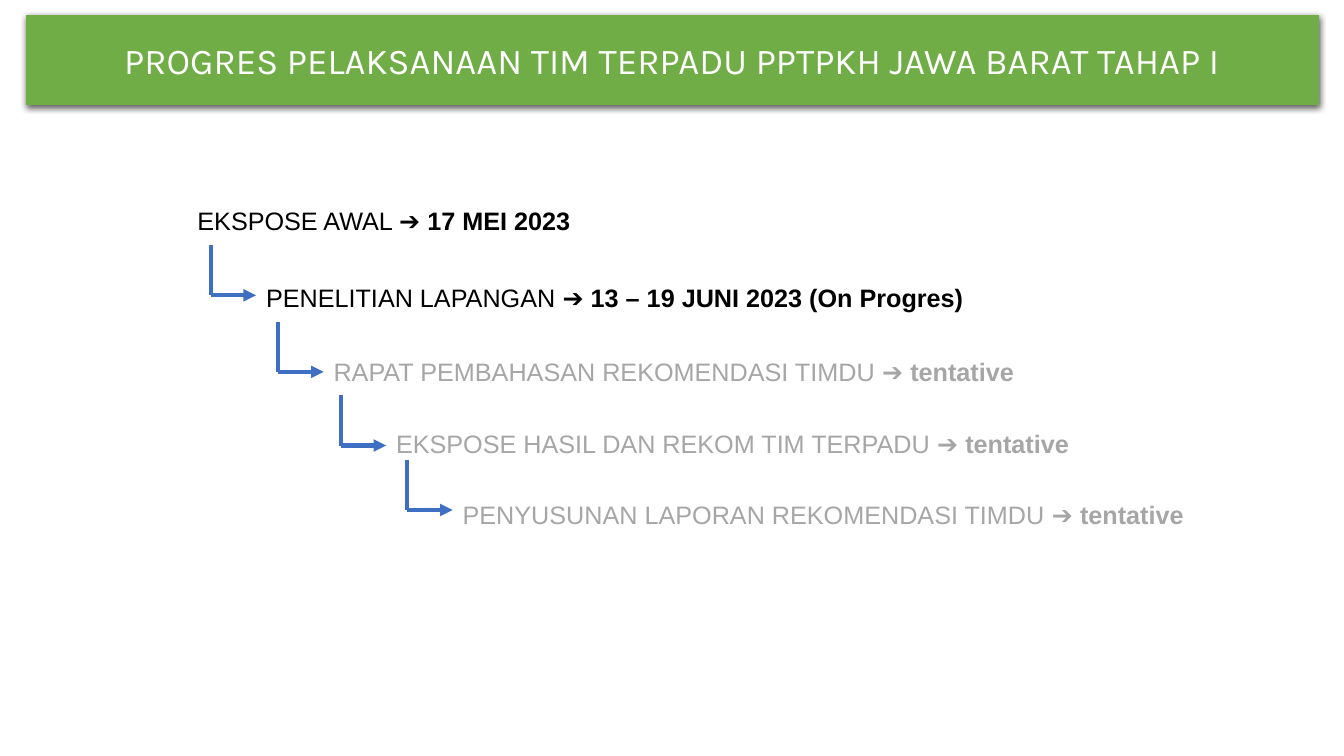
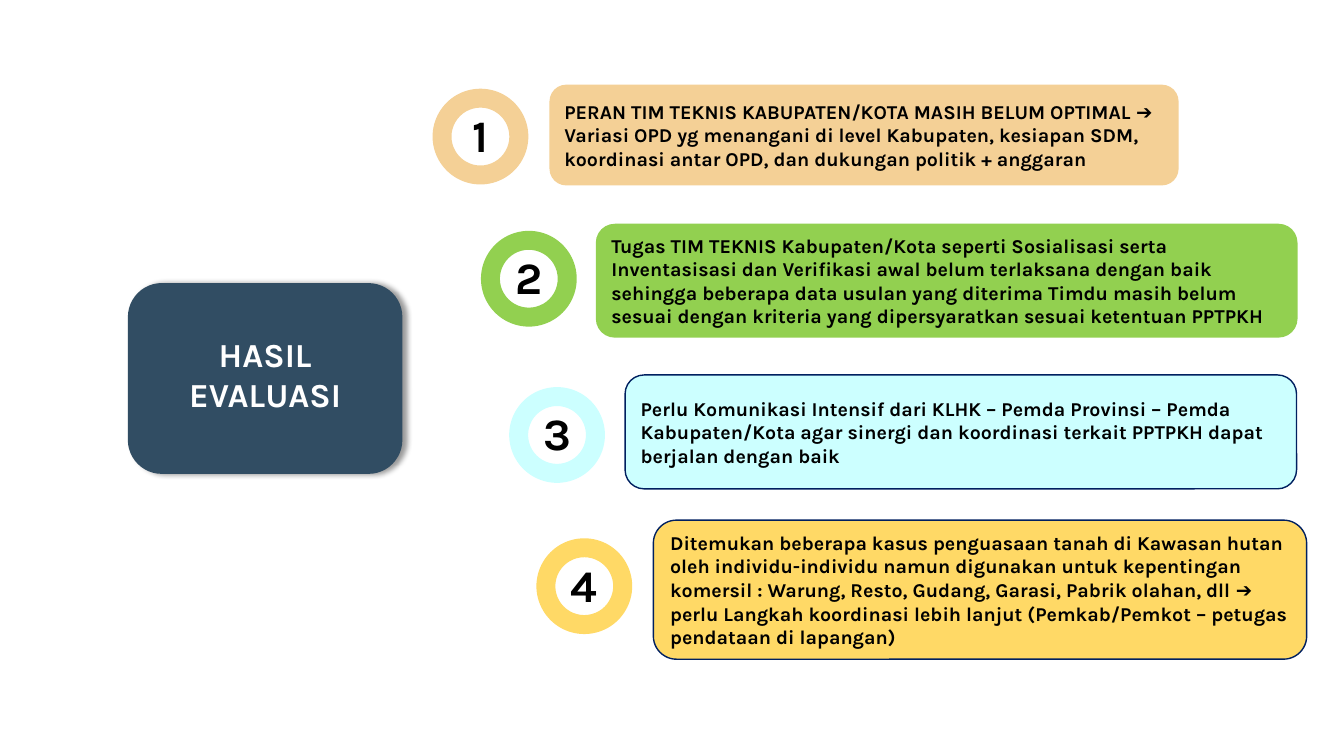
from dataclasses import dataclass
from typing import Optional

from lxml import etree
from pptx import Presentation
from pptx.dml.color import RGBColor
from pptx.enum import shapes as kinds, text as styles
from pptx.oxml import ns
from pptx.util import Inches, Pt

BLACK, WHITE, GREY = "000000", "FFFFFF", "A6A6A6"
GREEN, BLUE, SLATE, NAVY = "70AD47", "3F6FC3", "314D63", "002060"
TITLE_FONT, STEP_FONT = "Karla", "Arial"
ELBOW_WIDTH, ELBOW_HEIGHT = 0.45, 0.5
RING_SIZE, RING_BAND = 0.95, 0.198


@dataclass(frozen=True)
class Step:
    left: float
    top: float
    width: float
    label: str
    date: str
    color: str = GREY
    elbow_top: Optional[float] = None


@dataclass(frozen=True)
class Finding:
    left: float
    top: float
    width: float
    height: float
    ring_left: float
    ring_top: float
    fill: str
    message: str
    outline: Optional[str] = None


@dataclass(frozen=True)
class Shadow:
    opacity: int
    blur: float
    distance: float
    degrees: int


STEPS = (
    Step(1.86, 1.99, 4.3, "EKSPOSE AWAL ➔ ", "17 MEI 2023", BLACK),
    Step(2.54, 2.75, 7.19, "PENELITIAN LAPANGAN ➔ ", "13 – 19 JUNI 2023 (On Progres)", BLACK, 2.43),
    Step(3.21, 3.49, 7.2, "RAPAT PEMBAHASAN REKOMENDASI TIMDU ➔ ", "tentative", elbow_top=3.19),
    Step(3.83, 4.2, 7.2, "EKSPOSE HASIL DAN REKOM TIM TERPADU ➔ ", "tentative", elbow_top=3.92),
    Step(4.49, 4.9, 8.58, "PENYUSUNAN LAPORAN REKOMENDASI TIMDU ➔ ", "tentative", elbow_top=4.56),
)

FINDINGS = (
    Finding(5.45, 0.84, 6.24, 1, 4.29, 0.88, "F4D096",
            "PERAN TIM TEKNIS KABUPATEN/KOTA MASIH BELUM OPTIMAL ➔ Variasi OPD yg menangani "
            "di level Kabupaten, kesiapan SDM, koordinasi antar OPD, dan dukungan politik + anggaran"),
    Finding(5.91, 2.22, 6.96, 1.13, 4.77, 2.29, "92D050",
            "Tugas TIM TEKNIS Kabupaten/Kota seperti Sosialisasi serta Inventasisasi dan Verifikasi "
            "awal belum terlaksana dengan baik sehingga beberapa data usulan yang diterima Timdu "
            "masih belum sesuai dengan kriteria yang dipersyaratkan sesuai ketentuan PPTPKH"),
    Finding(6.2, 3.72, 6.66, 1.13, 5.05, 3.84, "CCFFFF",
            "Perlu Komunikasi Intensif dari KLHK – Pemda Provinsi – Pemda Kabupaten/Kota agar "
            "sinergi dan koordinasi terkait PPTPKH dapat berjalan dengan baik", NAVY),
    Finding(6.48, 5.16, 6.48, 1.38, 5.32, 5.34, "FFD966",
            "Ditemukan beberapa kasus penguasaan tanah di Kawasan hutan oleh individu-individu "
            "namun digunakan untuk kepentingan komersil : Warung, Resto, Gudang, Garasi, Pabrik "
            "olahan, dll ➔ perlu Langkah koordinasi lebih lanjut (Pemkab/Pemkot – petugas "
            "pendataan di lapangan)", NAVY),
)


def rgb(color: str) -> RGBColor:
    """Turn a hex string into a colour."""
    return RGBColor.from_string(color)


def add_shadow(shape, shadow: Shadow) -> None:
    """Give a shape an outer black shadow."""
    effects = shape._element.spPr.find(ns.qn("a:effectLst"))
    outer = etree.SubElement(effects, ns.qn("a:outerShdw"), {
        "blurRad": str(int(Pt(shadow.blur))), "dist": str(int(Pt(shadow.distance))),
        "dir": str(shadow.degrees * 60000), "algn": "ctr", "rotWithShape": "0"})
    color = etree.SubElement(outer, ns.qn("a:srgbClr"), val=BLACK)
    etree.SubElement(color, ns.qn("a:alpha"), val=str(shadow.opacity * 1000))


def add_panel(page, kind, left: float, top: float, width: float, height: float, fill: str,
              outline: Optional[str] = None, weight: float = 1, shadow: Optional[Shadow] = None):
    """Draw a filled preset shape."""
    panel = page.shapes.add_shape(kind, Inches(left), Inches(top), Inches(width), Inches(height))
    panel.shadow.inherit = False
    panel.fill.solid()
    panel.fill.fore_color.rgb = rgb(fill)
    if outline:
        panel.line.color.rgb = rgb(outline)
        panel.line.width = Pt(weight)
    else:
        panel.line.fill.background()
    if shadow:
        add_shadow(panel, shadow)
    return panel


def add_box(page, left: float, top: float, width: float, height: float):
    """Add an empty text box."""
    return page.shapes.add_textbox(Inches(left), Inches(top), Inches(width), Inches(height))


def write(shape, words: str, size: float, color: str = BLACK, bold: bool = False,
          font: str = TITLE_FONT, centred: bool = False, middle: bool = False):
    """Write one formatted paragraph into a shape."""
    frame = shape.text_frame
    frame.word_wrap = True
    frame.vertical_anchor = styles.MSO_ANCHOR.MIDDLE if middle else styles.MSO_ANCHOR.TOP
    para = frame.paragraphs[0]
    para.text = words
    para.alignment = styles.PP_ALIGN.CENTER if centred else styles.PP_ALIGN.LEFT
    format_span(para.runs[0], size, color, bold, font)
    return para


def format_span(span, size: float, color: str, bold: bool, font: str) -> None:
    """Set the font of one run."""
    span.font.name = font
    span.font.size = Pt(size)
    span.font.bold = bold
    span.font.color.rgb = rgb(color)


def add_line(page, start: tuple[float, float], end: tuple[float, float], arrow: bool = False) -> None:
    """Draw a straight line, with an arrowhead if asked."""
    line = page.shapes.add_connector(kinds.MSO_CONNECTOR.STRAIGHT, *map(Inches, start + end))
    line.line.color.rgb = rgb(BLUE)
    line.line.width = Pt(3)
    if arrow:
        etree.SubElement(line.line._get_or_add_ln(), ns.qn("a:tailEnd"), type="triangle")
    etree.SubElement(line._element.spPr, ns.qn("a:effectLst"))


def add_step(page, step: Step) -> None:
    """Draw one step and the elbow arrow leading to it."""
    para = write(add_box(page, step.left, step.top, step.width, 0.4),
                 step.label, 18, step.color, font=STEP_FONT)
    date = para.add_run()
    date.text = step.date
    format_span(date, 18, step.color, True, STEP_FONT)
    if step.elbow_top is not None:
        left, bottom = step.left - ELBOW_WIDTH, step.elbow_top + ELBOW_HEIGHT
        add_line(page, (left, step.elbow_top), (left, bottom))
        add_line(page, (left, bottom), (step.left, bottom), arrow=True)


def add_finding(page, number: int, finding: Finding) -> None:
    """Draw one finding with its numbered ring."""
    panel = add_panel(page, kinds.MSO_SHAPE.ROUNDED_RECTANGLE, finding.left, finding.top,
                      finding.width, finding.height, finding.fill, finding.outline)
    write(panel, finding.message, 14, bold=True, middle=True)
    ring = add_panel(page, kinds.MSO_SHAPE.DONUT, finding.ring_left, finding.ring_top,
                     RING_SIZE, RING_SIZE, finding.fill)
    ring.adjustments[0] = RING_BAND
    digit = add_box(page, finding.ring_left, finding.ring_top - 0.02, RING_SIZE, RING_SIZE)
    write(digit, str(number), 32, bold=True, centred=True, middle=True)


def build_progress(page) -> None:
    """Build the progress slide."""
    for step in STEPS:
        add_step(page, step)
    banner = add_panel(page, kinds.MSO_SHAPE.RECTANGLE, 0.26, 0.15, 12.82, 0.89, GREEN,
                       shadow=Shadow(63, 4.5, 1.5, 90))
    write(banner, "PROGRES PELAKSANAAN TIM TERPADU PPTPKH JAWA BARAT TAHAP I", 26, WHITE,
          centred=True, middle=True)


def build_evaluation(page) -> None:
    """Build the evaluation slide."""
    add_panel(page, kinds.MSO_SHAPE.ROUNDED_RECTANGLE, 1.3, 2.84, 2.66, 1.83, SLATE, SLATE, 4.5,
              Shadow(40, 4, 3, 0))
    write(add_box(page, 1.41, 3.26, 2.44, 0.91), "HASIL EVALUASI", 24, WHITE, bold=True, centred=True)
    for number, finding in enumerate(FINDINGS, 1):
        add_finding(page, number, finding)


def main() -> None:
    """Build and save the deck."""
    deck = Presentation()
    deck.slide_width, deck.slide_height = Inches(13.33), Inches(7.5)
    for build in (build_progress, build_evaluation):
        build(deck.slides.add_slide(deck.slide_layouts[6]))
    deck.save("out.pptx")


if __name__ == "__main__":
    main()
